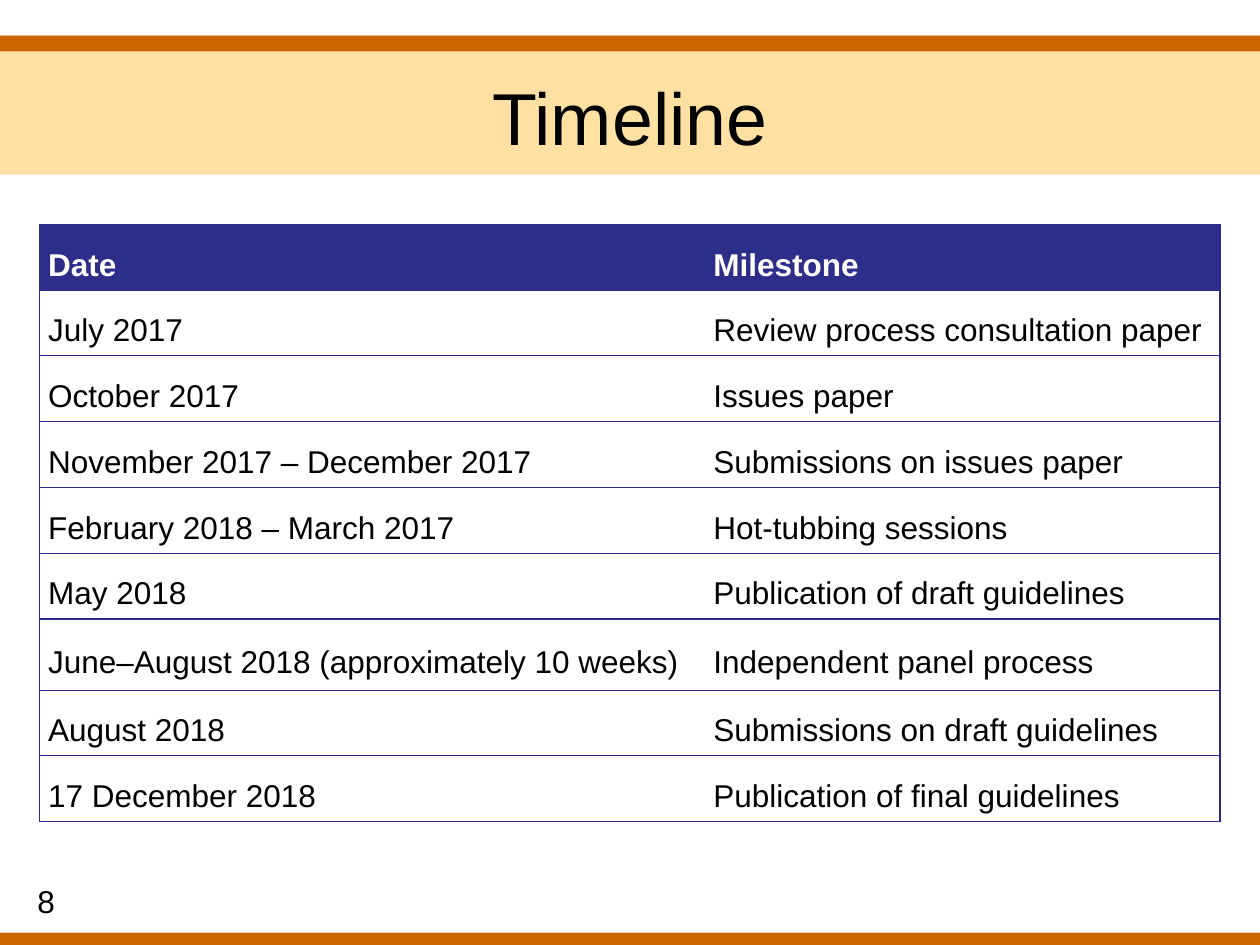
"""Build the timeline slide: title band, milestone table and page number."""
import lxml.etree
import pptx
import pptx.dml.color
import pptx.enum.shapes
import pptx.enum.text
import pptx.oxml.ns
import pptx.util

Pt = pptx.util.Pt
RGB = pptx.dml.color.RGBColor
ALIGN = pptx.enum.text.PP_ALIGN
ANCHOR = pptx.enum.text.MSO_ANCHOR
qn = pptx.oxml.ns.qn

BLACK = RGB(0x00, 0x00, 0x00)
WHITE = RGB(0xFF, 0xFF, 0xFF)
ORANGE = RGB(0xCC, 0x66, 0x00)
CREAM = RGB(0xFF, 0xCC, 0x66)
NAVY = RGB(0x2D, 0x2D, 0x8A)
EDGE = RGB(0x2A, 0x2A, 0x89)

WIDE, HIGH = 720, 540
COLS = (380.16, 294.48)
ROW = 37.6
TALL = {6: 40.6}
ROWS = (
    ("Date", "Milestone"),
    ("July 2017", "Review process consultation paper"),
    ("October 2017", "Issues paper"),
    ("November 2017 – December 2017", "Submissions on issues paper"),
    ("February 2018 – March 2017", "Hot-tubbing sessions"),
    ("May 2018", "Publication of draft guidelines"),
    ("June–August 2018 (approximately 10 weeks)", "Independent panel process"),
    ("August 2018", "Submissions on draft guidelines"),
    ("17 December 2018", "Publication of final guidelines"),
)

FONT = {"name": "Arial", "size": Pt(18), "bold": False}
CELL = {
    "margin_left": Pt(5.04), "margin_right": Pt(5.04),
    "margin_top": Pt(6), "margin_bottom": Pt(0),
    "vertical_anchor": ANCHOR.MIDDLE,
}
PARA = {"line_spacing": 1.15, "space_after": Pt(4)}


def apply(item, form):
    for key, val in form.items():
        setattr(item, key, val)


def write(frame, text, color, font=None, para=None):
    line = frame.paragraphs[0]
    apply(line, para or {})
    run = line.add_run()
    run.text = text
    apply(run.font, {**FONT, **(font or {})})
    run.font.color.rgb = color


def add_band(slide, top, height, color, alpha=None):
    kind = pptx.enum.shapes.MSO_SHAPE.RECTANGLE
    band = slide.shapes.add_shape(kind, Pt(0), Pt(top), Pt(WIDE), Pt(height))
    band.shadow.inherit = False
    band.fill.solid()
    band.fill.fore_color.rgb = color
    band.line.fill.background()
    if alpha:
        tint = band.fill._xPr.find(".//" + qn("a:srgbClr"))
        lxml.etree.SubElement(tint, qn("a:alpha"), val=str(alpha * 1000))


def add_label(slide, box, text, font=None, para=None, anchor=ANCHOR.TOP):
    frame = slide.shapes.add_textbox(*map(Pt, box)).text_frame
    apply(frame, {"word_wrap": True, "vertical_anchor": anchor})
    write(frame, text, BLACK, font, para)


def add_edge(cell, side, shown):
    props = cell._tc.get_or_add_tcPr()
    line = lxml.etree.SubElement(props, qn("a:ln" + side), w=str(Pt(0.75)))
    if shown:
        fill = lxml.etree.SubElement(line, qn("a:solidFill"))
        lxml.etree.SubElement(fill, qn("a:srgbClr"), val=str(EDGE))
    else:
        lxml.etree.SubElement(line, qn("a:noFill"))


def fill_cell(cell, text, head, first):
    apply(cell, CELL)
    edges = {"L": first, "R": not first, "T": True, "B": True}
    for side, shown in edges.items():
        add_edge(cell, side, shown)
    if head:
        cell.fill.solid()
        cell.fill.fore_color.rgb = NAVY
    else:
        cell.fill.background()
    write(cell.text_frame, text, WHITE if head else BLACK, {"bold": head}, PARA)


def add_grid(slide, left, top):
    highs = [TALL.get(row, ROW) for row in range(len(ROWS))]
    box = map(Pt, (left, top, sum(COLS), sum(highs)))
    grid = slide.shapes.add_table(len(ROWS), len(COLS), *box).table
    grid.horz_banding = False
    for col, width in zip(grid.columns, COLS):
        col.width = Pt(width)
    for row, texts in enumerate(ROWS):
        grid.rows[row].height = Pt(highs[row])
        for col, text in enumerate(texts):
            fill_cell(grid.cell(row, col), text, row == 0, col == 0)


def main():
    deck = pptx.Presentation()
    apply(deck, {"slide_width": Pt(WIDE), "slide_height": Pt(HIGH)})
    slide = deck.slides.add_slide(deck.slide_layouts[6])
    add_band(slide, 20.4, 79.4, CREAM, 60)
    add_band(slide, 533, 9, ORANGE)
    add_band(slide, 20.4, 9, ORANGE)
    add_label(slide, (0, 21.6, WIDE, 90), "Timeline", {"size": Pt(42)},
              {"alignment": ALIGN.CENTER}, ANCHOR.MIDDLE)
    add_label(slide, (14.2, 500.4, 168, 28.8), "8")
    add_grid(slide, 22.5, 128.2)
    deck.save("out.pptx")


if __name__ == "__main__":
    main()
